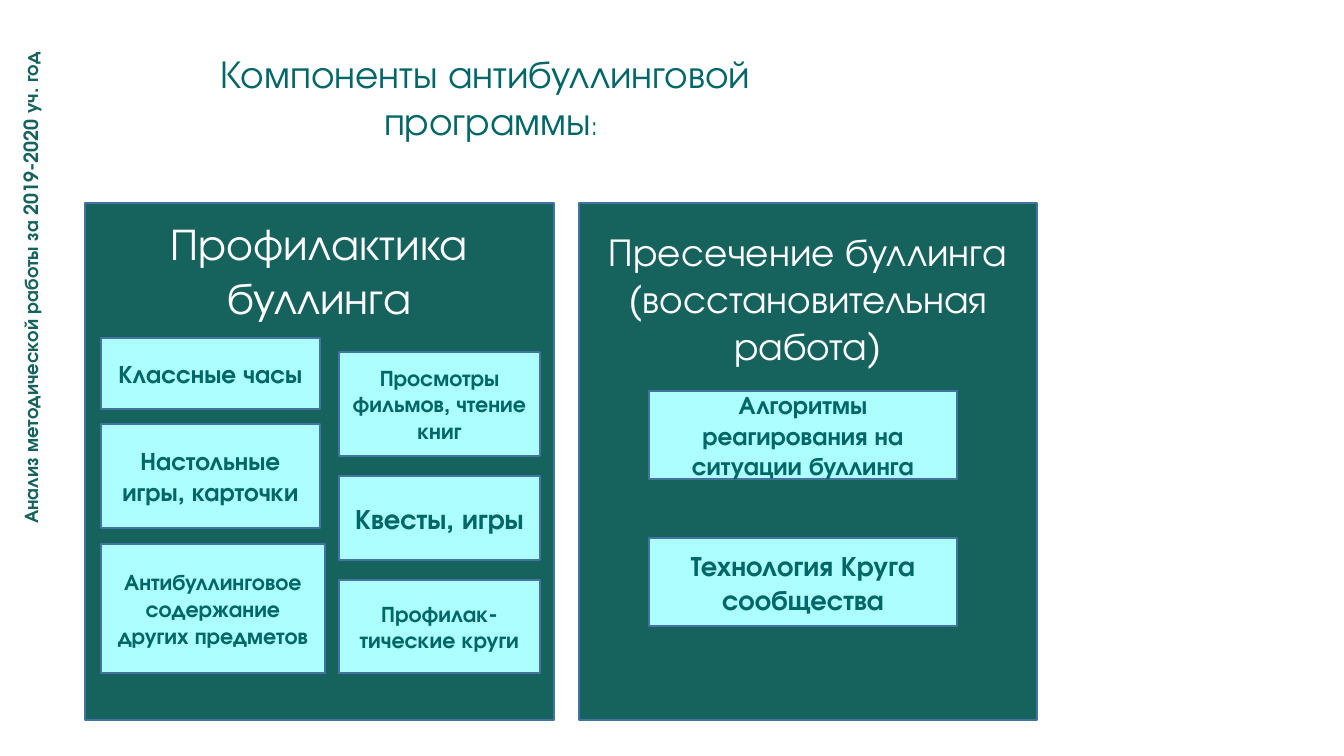
from pptx import Presentation
from pptx import util as u
from pptx.dml import color
from pptx.enum import shapes, text

COLORS = {"panel": "16625C", "card": "ADFFFF", "edge": "43739E",
          "ink": "006666", "white": "FFFFFF"}


def px(n):
    return u.Emu(round(n * 914400 / 100.8))


def rgb(name):
    return color.RGBColor.from_string(COLORS[name])


class Deck:
    font = "TeX Gyre Adventor"

    def __init__(self, width, height):
        self.prs = Presentation()
        self.prs.slide_width, self.prs.slide_height = px(width), px(height)
        self.s = self.prs.slides.add_slide(self.prs.slide_layouts[6])
        self.shapes = self.s.shapes

    def group(self):
        return self.s.shapes.add_group_shape().shapes

    def run(self, p, words, size, ink, bold=False):
        r = p.add_run()
        r.text = words
        r.font.name, r.font.size, r.font.bold = self.font, u.Pt(size), bold
        r.font.color.rgb = rgb(ink)

    def label(self, x, y, w, h, lines, ink, bold=False, rotation=0, right=10):
        """Each line is an alignment and a list of (words, size) runs."""
        sp = self.s.shapes.add_textbox(px(x), px(y), px(w), px(h))
        sp.rotation = rotation
        tf = sp.text_frame
        tf.word_wrap = True
        tf.margin_right = px(right)
        for i, (align, runs) in enumerate(lines):
            p = tf.add_paragraph() if i else tf.paragraphs[0]
            p.alignment = align
            for words, size in runs:
                self.run(p, words, size, ink, bold)

    def box(self, parent, x, y, w, h, fill):
        sp = parent.add_shape(shapes.MSO_SHAPE.RECTANGLE, px(x), px(y), px(w), px(h))
        sp.shadow.inherit = False
        sp.fill.solid()
        sp.fill.fore_color.rgb = rgb(fill)
        sp.line.color.rgb = rgb("edge")
        sp.line.width = u.Pt(1)
        tf = sp.text_frame
        tf.word_wrap = True
        tf.paragraphs[0].alignment = text.PP_ALIGN.CENTER
        return tf

    def panel(self, parent, x, y, w, h, words, size, top):
        tf = self.box(parent, x, y, w, h, "panel")
        tf.vertical_anchor = text.MSO_ANCHOR.TOP
        tf.margin_top = px(top)
        self.run(tf.paragraphs[0], words, size, "white")

    def card(self, parent, x, y, w, h, words, size):
        tf = self.box(parent, x, y, w, h, "card")
        tf.vertical_anchor = text.MSO_ANCHOR.MIDDLE
        self.run(tf.paragraphs[0], words, size, "ink", True)


def main():
    deck = Deck(1344, 756)
    left, center = text.PP_ALIGN.LEFT, text.PP_ALIGN.CENTER

    # Side caption
    deck.label(-258, 271, 577, 34,
               [(center, [("Анализ методической работы за 2019-2020 уч. год", 14)])],
               "panel", bold=True, rotation=270)

    # Prevention panel and its cards
    prevention = deck.group()
    deck.panel(prevention, 85, 203, 469, 517, "Профилактика буллинга", 32, 13)
    for card in [
        (101, 424, 219, 104, "Настольные игры, карточки", 18),
        (101, 338, 219, 71, "Классные часы", 18),
        (339, 352, 201, 104, "Просмотры фильмов, чтение книг", 16),
        (339, 476, 201, 84, "Квесты, игры", 20),
        (101, 544, 224, 129, "Антибуллинговое содержание других предметов", 16),
        (339, 580, 201, 93, "Профилак-тические круги", 16),
    ]:
        deck.card(prevention, *card)

    # Response panel and its cards
    deck.panel(deck.shapes, 579, 203, 458, 517,
               "Пресечение буллинга (восстановительная работа)", 28, 24)
    for y, words, size in [
        (391, "Алгоритмы реагирования на ситуации буллинга", 18),
        (538, "Технология Круга сообщества", 20),
    ]:
        deck.card(deck.shapes, 649, y, 308, 88, words, size)

    # Title
    deck.label(211, 44, 630, 105,
               [(left, [("Компоненты антибуллинговой", 28)]),
                (center, [("программы", 28), (":", 18)])],
               "ink", right=80)

    deck.prs.save("out.pptx")


if __name__ == "__main__":
    main()
